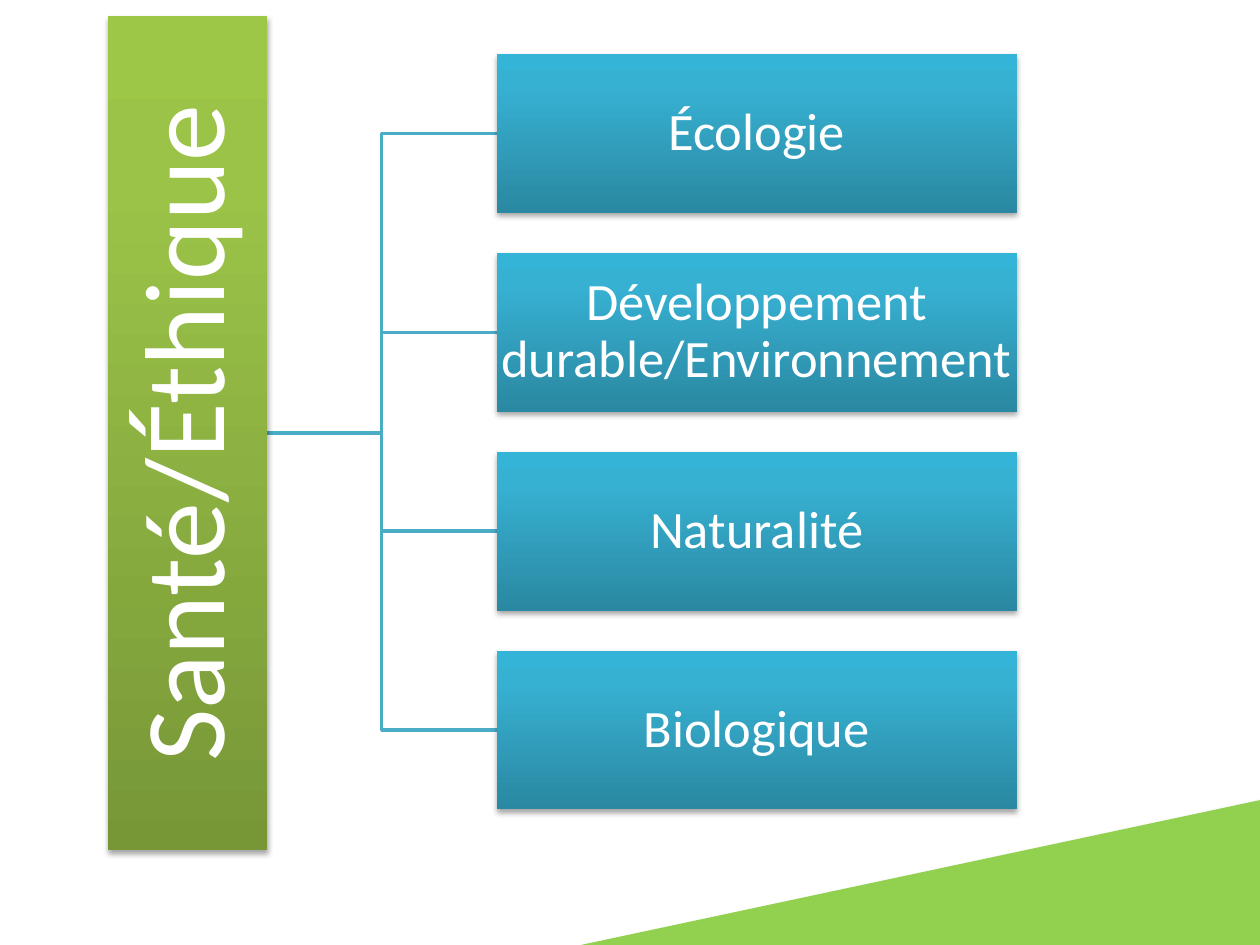
import copy

import pptx
import pptx.util
from lxml import etree
from pptx.dml.color import RGBColor
from pptx.enum.shapes import MSO_SHAPE
from pptx.enum.text import MSO_ANCHOR, PP_ALIGN
from pptx.oxml.ns import qn
from pptx.util import Cm

COLORS = {
    "text": "FFFFFF",
    "branch": "4BACC6",
    "corner": "92D050",
    "shadow": "000000",
}
# Gradient stops from bottom to top
GRADIENTS = {
    "root": {0: "779737", 0.8: "9BC348", 1: "9DC746"},
    "topic": {0: "2A88A2", 0.8: "37B1D2", 1: "34B4D6"},
}
TOPICS = ["Écologie", "Développement durable/Environnement", "Naturalité", "Biologique"]


def rgb(name):
    return RGBColor.from_string(COLORS[name])


def add_shadow(shape):
    """Soft shadow falling straight down."""
    shape.shadow.inherit = False
    effects = shape._element.spPr.find(qn("a:effectLst"))
    shadow = etree.SubElement(effects, qn("a:outerShdw"), blurRad="40000",
                              dist="23000", dir="5400000", rotWithShape="0")
    color = etree.SubElement(shadow, qn("a:srgbClr"), val=COLORS["shadow"])
    etree.SubElement(color, qn("a:alpha"), val="35000")


def fill_gradient(shape, stops):
    """Vertical gradient that stays upright when the shape is turned."""
    shape.fill.gradient()
    shape.fill.gradient_angle = 90
    gradient = shape._element.spPr.find(qn("a:gradFill"))
    gradient.set("rotWithShape", "0")
    stop_list = gradient.find(qn("a:gsLst"))
    stop_list.insert(1, copy.deepcopy(stop_list[0]))
    for stop, (position, color) in zip(shape.fill.gradient_stops, stops.items()):
        stop.position = position
        stop.color.rgb = RGBColor.from_string(color)


def add_label_box(slide, box, label, gradient, size, inset):
    card = slide.shapes.add_shape(MSO_SHAPE.RECTANGLE, *box)
    fill_gradient(card, GRADIENTS[gradient])
    card.line.fill.background()
    add_shadow(card)

    frame = card.text_frame
    frame.word_wrap = True
    frame.vertical_anchor = MSO_ANCHOR.MIDDLE
    frame.margin_left = frame.margin_right = inset
    frame.margin_top = frame.margin_bottom = inset
    paragraph = frame.paragraphs[0]
    paragraph.alignment = PP_ALIGN.CENTER
    paragraph.line_spacing = 0.9
    run = paragraph.add_run()
    run.text = label
    run.font.name = "Calibri"
    run.font.size = pptx.util.Pt(size)
    run.font.color.rgb = rgb("text")
    return card


def add_branch(slide, start, end):
    """Elbow line that turns halfway between its ends."""
    middle = (start[0] + end[0]) // 2
    builder = slide.shapes.build_freeform(*start)
    builder.add_line_segments([(middle, start[1]), (middle, end[1]), end], close=False)
    branch = builder.convert_to_shape()
    branch.fill.background()
    branch.line.color.rgb = rgb("branch")
    branch.line.width = pptx.util.Pt(2)
    branch.shadow.inherit = False


def add_tree(slide, left, top, width, height):
    bar = Cm(3.2)
    topic_left, topic_width = left + Cm(7.83), width - Cm(7.83)
    first_top, pitch = top + Cm(0.77), Cm(4.01)
    center = top + height // 2
    tops = [first_top + row * pitch for row in range(len(TOPICS))]

    # Branches, lowest one at the back
    for topic_top in reversed(tops):
        add_branch(slide, (left + bar, center), (topic_left, topic_top + bar // 2))

    # Root bar, laid flat around its centre and then turned upright
    root_box = (left + (bar - height) // 2, center - bar // 2, height, bar)
    root = add_label_box(slide, root_box, "Santé/Éthique", "root", 65, Cm(0.12))
    root.rotation = 270

    # Topics
    for topic, topic_top in zip(TOPICS, tops):
        topic_box = (topic_left, topic_top, topic_width, bar)
        add_label_box(slide, topic_box, topic, "topic", 30, Cm(0.05))


def add_corner(slide, left, top, width, height):
    corner = slide.shapes.add_shape(MSO_SHAPE.RIGHT_TRIANGLE, left, top, width, height)
    corner.rotation = 180
    corner._element.spPr.find(qn("a:xfrm")).set("flipV", "1")
    corner.fill.solid()
    corner.fill.fore_color.rgb = rgb("corner")
    corner.line.fill.background()
    add_shadow(corner)


def main():
    deck = pptx.Presentation()
    deck.slide_width, deck.slide_height = Cm(25.4), Cm(19.05)
    slide = deck.slides.add_slide(deck.slide_layouts[6])
    add_tree(slide, Cm(2.18), Cm(0.32), Cm(18.32), Cm(16.82))
    add_corner(slide, Cm(11.71), Cm(16.13), Cm(13.69), Cm(2.92))
    deck.save("out.pptx")


if __name__ == "__main__":
    main()
